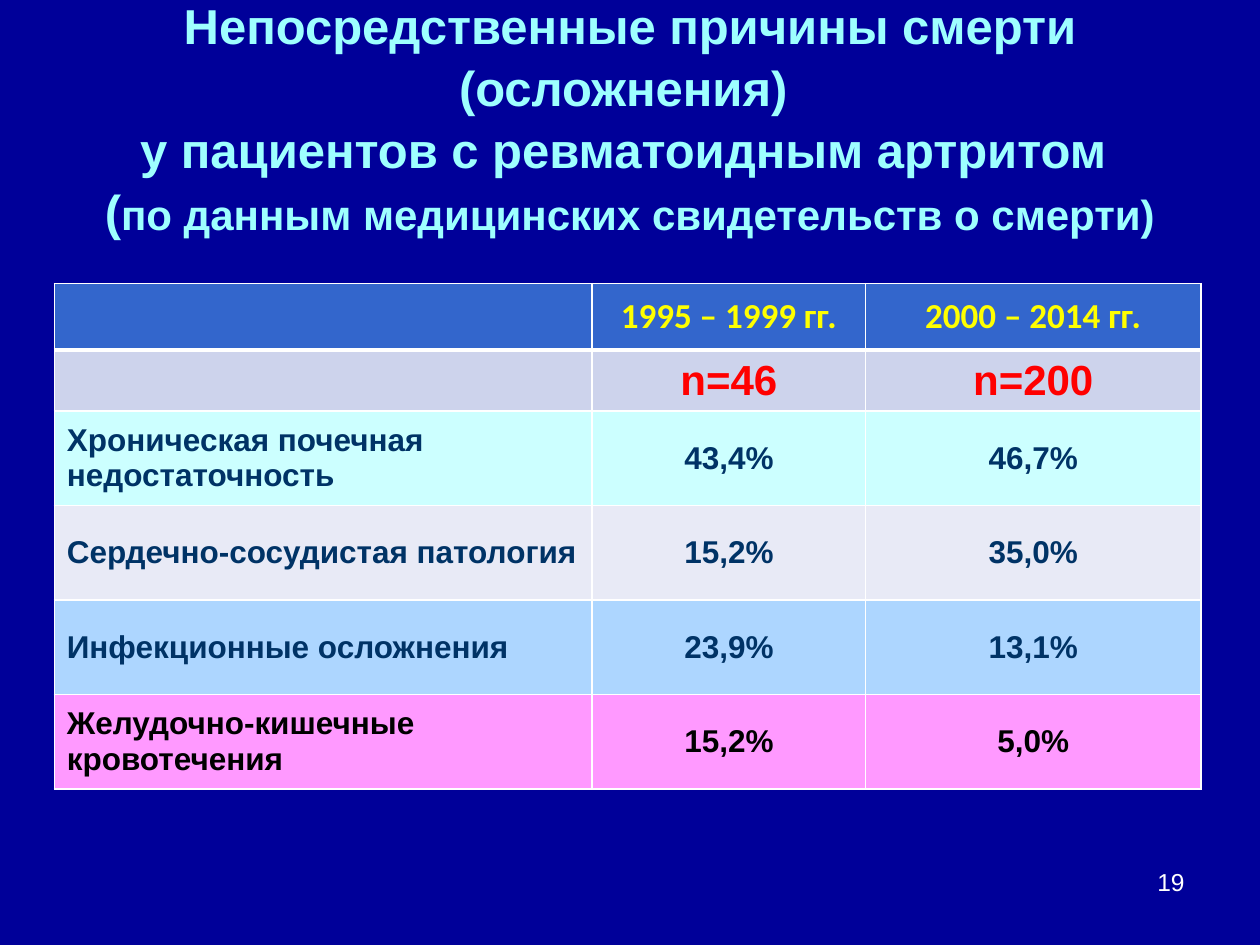
from pptx import Presentation
from pptx.dml.color import RGBColor
from pptx.enum.text import MSO_ANCHOR as Anchor, PP_ALIGN as Align
from pptx.oxml import parse_xml
from pptx.oxml.ns import nsdecls
from pptx.util import Pt

NAVY = RGBColor(0x00, 0x00, 0x99)
CYAN = RGBColor(0x9E, 0xFF, 0xFF)
WHITE = RGBColor(0xFF, 0xFF, 0xFF)
YELLOW = RGBColor(0xFF, 0xFF, 0x00)
RED = RGBColor(0xFF, 0x00, 0x00)
INK = RGBColor(0x00, 0x33, 0x66)
BLACK = RGBColor(0x00, 0x00, 0x00)
BLUE = RGBColor(0x33, 0x66, 0xCC)
LAVENDER = RGBColor(0xCD, 0xD3, 0xEC)
AQUA = RGBColor(0xCC, 0xFF, 0xFF)
PALE = RGBColor(0xE8, 0xEA, 0xF6)
SKY = RGBColor(0xAD, 0xD6, 0xFF)
PINK = RGBColor(0xFF, 0x99, 0xFF)


def set_font(font, name, size, color, bold=True):
    font.name = name
    font.size = Pt(size)
    font.bold = bold
    font.color.rgb = color


def add_border(cell, side, width):
    cell._tc.get_or_add_tcPr().append(parse_xml(
        f'<a:ln{side} {nsdecls("a")} w="{Pt(width)}"><a:solidFill>'
        f'<a:srgbClr val="{WHITE}"/></a:solidFill></a:ln{side}>'))


deck = Presentation()
deck.slide_width, deck.slide_height = Pt(720), Pt(540)
page = deck.slides.add_slide(deck.slide_layouts[6])
page.background.fill.solid()
page.background.fill.fore_color.rgb = NAVY

title = page.shapes.add_textbox(Pt(36), Pt(21.6), Pt(648), Pt(90)).text_frame
title.word_wrap = True
title.vertical_anchor = Anchor.MIDDLE
para = title.paragraphs[0]
para.alignment = Align.CENTER
para.line_spacing = 1.05
para.text = ("Непосредственные причины смерти\v(осложнения) \v"
             "у пациентов с ревматоидным артритом \v(")
para.add_run().text = "по данным медицинских свидетельств о смерти)"
for span in para.runs:
    set_font(span.font, "Arial", 28, CYAN)
para.runs[-1].font.size = Pt(24)

number = page.shapes.add_textbox(Pt(516), Pt(492), Pt(168), Pt(37.5)).text_frame
number.word_wrap = True
para = number.paragraphs[0]
para.text = "19"
para.alignment = Align.RIGHT
set_font(para.font, "Arial", 14, WHITE, bold=False)

rows = [
    (38, BLUE, "Calibri", 20, YELLOW, ["", "1995 – 1999 гг.", "2000 – 2014 гг."]),
    (34, LAVENDER, "Arial", 24, RED, ["", "n=46", "n=200"]),
    (54, AQUA, "Arial", 18, INK,
     ["Хроническая почечная недостаточность", "43,4%", "46,7%"]),
    (54, PALE, "Arial", 18, INK,
     ["Сердечно-сосудистая патология", "15,2%", "35,0%"]),
    (54, SKY, "Arial", 18, INK, ["Инфекционные осложнения", "23,9%", "13,1%"]),
    (54, PINK, "Arial", 18, BLACK,
     ["Желудочно-кишечные кровотечения", "15,2%", "5,0%"]),
]
widths = [307.4, 156.3, 191.5]
table = page.shapes.add_table(len(rows), len(widths), Pt(31), Pt(162),
                              Pt(sum(widths)), Pt(288)).table
for column, width in zip(table.columns, widths):
    column.width = Pt(width)

for r, (height, fill, name, size, color, texts) in enumerate(rows):
    table.rows[r].height = Pt(height)
    for c, text in enumerate(texts):
        cell = table.cell(r, c)
        cell.vertical_anchor = Anchor.MIDDLE
        cell.margin_top = cell.margin_bottom = Pt(3)
        for side, width in (("L", 1), ("R", 1), ("T", 3 if r == 1 else 1),
                            ("B", 3 if r == 0 else 1)):
            add_border(cell, side, width)
        cell.fill.solid()
        cell.fill.fore_color.rgb = fill
        para = cell.text_frame.paragraphs[0]
        para.text = text
        para.alignment = Align.CENTER if c else Align.LEFT
        set_font(para.font, name, size, color)

deck.save("out.pptx")
